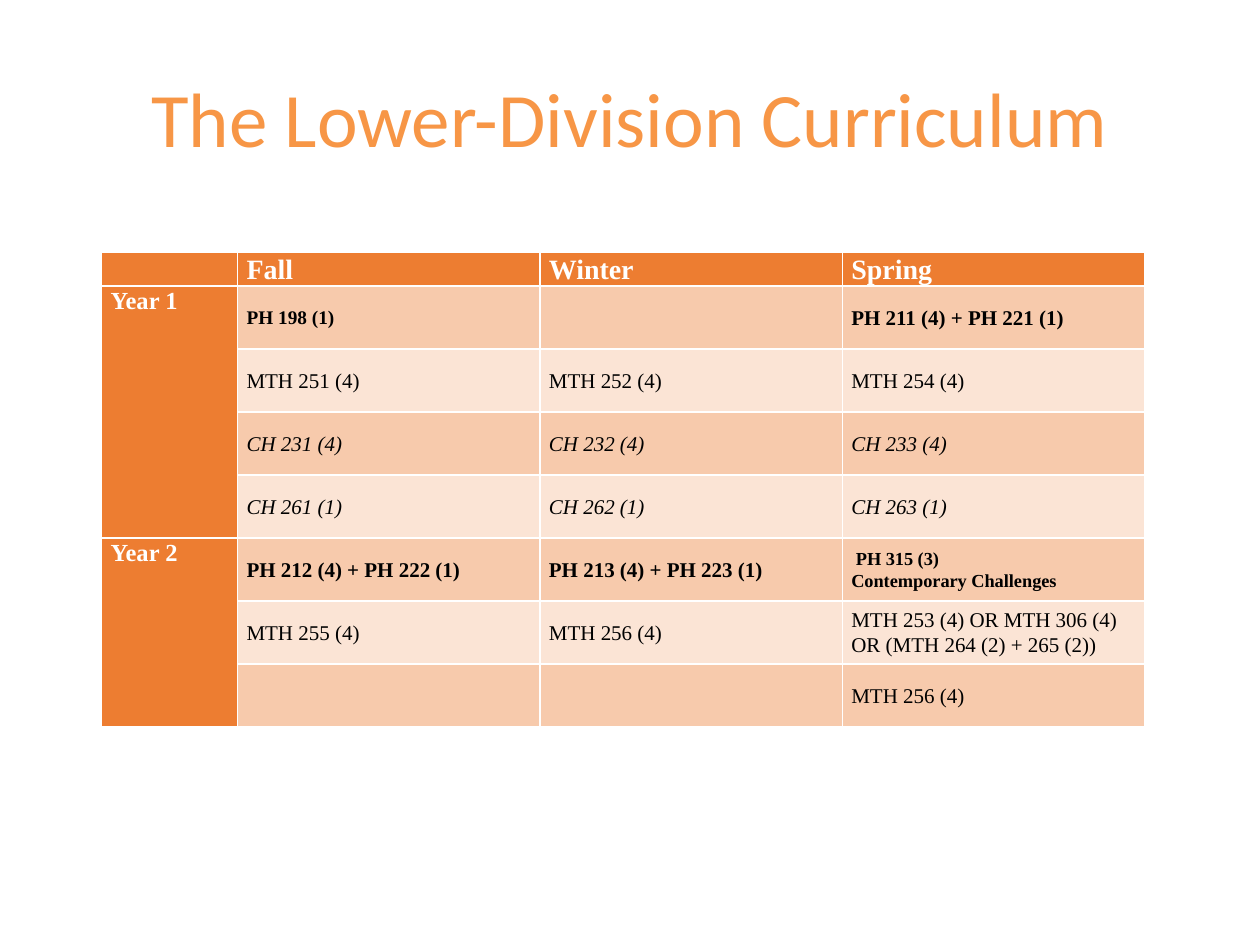
from dataclasses import dataclass

from pptx import Presentation
from pptx import util as u
from pptx.dml import color
from pptx.enum import text
from pptx.oxml import parse_xml
from pptx.oxml import ns


@dataclass(frozen=True)
class Theme:
    title_color: str = "F79646"
    heading_fill: str = "ED7D31"
    band_fills: tuple = ("F7CAAC", "FBE4D5")
    light: str = "FFFFFF"
    dark: str = "000000"
    title_font: str = "Calibri"
    table_font: str = "Times New Roman"
    title_size: float = 44
    term_size: float = 16
    year_size: float = 14
    course_size: float = 12
    line_spacing: float = 1.07


THEME = Theme()
TERMS = ("Fall", "Winter", "Spring")
# Each row: text style, then one entry per term
YEARS = {
    "Year 1": [
        ("bold", "PH 198 (1)", "", "PH 211 (4) + PH 221 (1)"),
        ("plain", "MTH 251 (4)", "MTH 252 (4)", "MTH 254 (4)"),
        ("italic", "CH 231 (4)", "CH 232 (4)", "CH 233 (4)"),
        ("italic", "CH 261 (1)", "CH 262 (1)", "CH 263 (1)"),
    ],
    "Year 2": [
        ("bold", "PH 212 (4) + PH 222 (1)", "PH 213 (4) + PH 223 (1)",
         " PH 315 (3)\nContemporary Challenges"),
        ("plain", "MTH 255 (4)", "MTH 256 (4)",
         "MTH 253 (4) OR MTH 306 (4) OR (MTH 264 (2) + 265 (2))"),
        ("plain", "", "", "MTH 256 (4)"),
    ],
}
# Courses set smaller than the rest
SMALL_SIZES = {"PH 198 (1)": 11, YEARS["Year 2"][0][3]: 10.5}


def style_span(font, name, size, rgb, style="plain"):
    font.name, font.size = name, u.Pt(size)
    font.color.rgb = color.RGBColor.from_string(rgb)
    font.bold, font.italic = style == "bold", style == "italic"


def add_borders(cell):
    properties = cell._tc.get_or_add_tcPr()
    for position, side in enumerate(("lnL", "lnR", "lnT", "lnB")):
        properties.insert(position, parse_xml(
            f'<a:{side} {ns.nsdecls("a")} w="12700"><a:solidFill>'
            f'<a:srgbClr val="{THEME.light}"/></a:solidFill></a:{side}>'))


def fill_cell(cell, words, fill, size, rgb, style, anchor):
    cell.fill.solid()
    cell.fill.fore_color.rgb = color.RGBColor.from_string(fill)
    add_borders(cell)
    cell.margin_left = cell.margin_right = u.Cm(0.18)
    cell.margin_top = cell.margin_bottom = 0
    cell.vertical_anchor = anchor
    cell.text_frame.text = words
    for para in cell.text_frame.paragraphs:
        para.line_spacing = THEME.line_spacing
        for span in para.runs:
            style_span(span.font, THEME.table_font, size, rgb, style)
        if not para.runs:  # keeps an empty cell from stretching its row
            para._p.append(parse_xml(
                f'<a:endParaRPr {ns.nsdecls("a")} sz="{int(size * 50)}"/>'))


def fill_heading(cell, words, size):
    fill_cell(cell, words, THEME.heading_fill, size, THEME.light, "bold",
              text.MSO_ANCHOR.TOP)


def place_title(page, box, words):
    title = page.shapes.title
    title.left, title.top, title.width, title.height = box
    title.text_frame.text = words
    title.text_frame.vertical_anchor = text.MSO_ANCHOR.MIDDLE
    para = title.text_frame.paragraphs[0]
    para.alignment = text.PP_ALIGN.CENTER
    style_span(para.runs[0].font, THEME.title_font, THEME.title_size,
               THEME.title_color)


def place_curriculum(page, box):
    left, top, width, height = box
    row_count = 1 + sum(len(courses) for courses in YEARS.values())
    table = page.shapes.add_table(row_count, 1 + len(TERMS), *box).table
    table.first_row = table.horz_banding = False

    # Column widths and row heights
    year_width, header_height = u.Cm(2.74), u.Cm(0.66)
    for index, column in enumerate(table.columns):
        column.width = (width - year_width) // len(TERMS) if index else year_width
    for index, row in enumerate(table.rows):
        row.height = (height - header_height) // (row_count - 1) if index else header_height

    # Term headings
    for index, term in enumerate(("",) + TERMS):
        fill_heading(table.cell(0, index), term, THEME.term_size)

    # Years and their courses
    row_index = 1
    for year, courses in YEARS.items():
        last = row_index + len(courses) - 1
        for offset, (style, *entries) in enumerate(courses):
            fill_heading(table.cell(row_index, 0), "" if offset else year,
                         THEME.year_size)
            for column_index, words in enumerate(entries, 1):
                fill_cell(table.cell(row_index, column_index), words,
                          THEME.band_fills[offset % 2],
                          SMALL_SIZES.get(words, THEME.course_size),
                          THEME.dark, style, text.MSO_ANCHOR.MIDDLE)
            row_index += 1
        table.cell(last - len(courses) + 1, 0).merge(table.cell(last, 0))


def main():
    deck = Presentation()
    deck.slide_width, deck.slide_height = u.Cm(25.4), u.Cm(19.05)
    page = deck.slides.add_slide(deck.slide_layouts.get_by_name("Title Only"))
    place_title(page, (u.Cm(1.27), u.Cm(0.76), u.Cm(22.86), u.Cm(3.18)),
                "The Lower-Division Curriculum")
    place_curriculum(page, (u.Cm(2.05), u.Cm(5.09), u.Cm(21.03), u.Cm(9.55)))
    deck.save("out.pptx")


if __name__ == "__main__":
    main()
